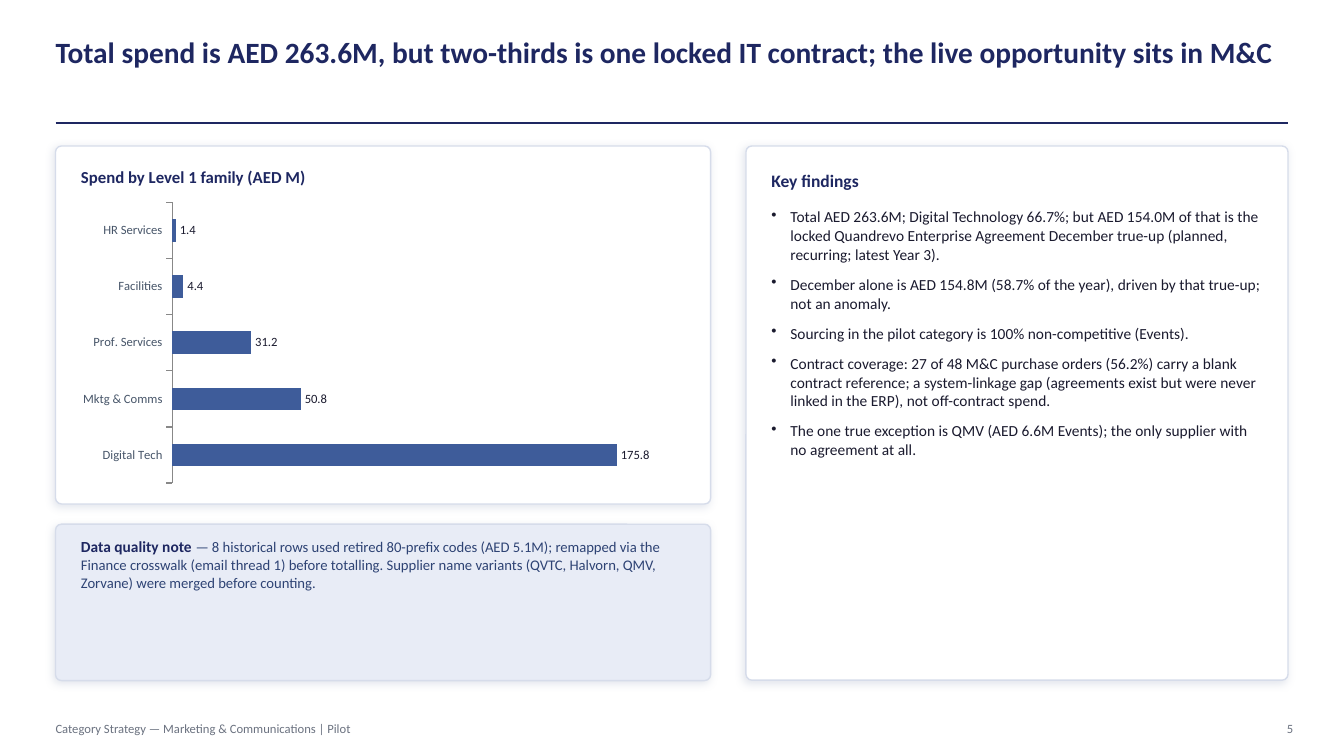
import pptx
import pptx.chart.data
import pptx.dml.color
import pptx.enum.chart
import pptx.enum.shapes
import pptx.enum.text
import pptx.oxml
import pptx.oxml.ns
import pptx.util
from pptx.util import Cm

COLORS = {
    "navy": "1E2761", "slate_blue": "2E4374", "bar": "3E5C9A", "ink": "1A1A2E",
    "axis_text": "475569", "axis_line": "888888", "footer": "6B7280",
    "border": "D6DCEA", "shadow": "9AA6C0", "note": "E8ECF6",
    "white": "FFFFFF", "black": "000000",
}
MIDDLE = pptx.enum.text.MSO_ANCHOR.MIDDLE
TOP = pptx.enum.text.MSO_ANCHOR.TOP
LEFT = pptx.enum.text.PP_ALIGN.LEFT
RIGHT = pptx.enum.text.PP_ALIGN.RIGHT


class SlideBuilder:
    """Holds the slide and its style, and adds each kind of element."""

    font_name = "Calibri"
    corner_radius = 0.15

    def __init__(self, slide):
        self.slide = slide

    def color(self, name):
        return pptx.dml.color.RGBColor.from_string(COLORS[name])

    def style_font(self, font, size, color, bold=False):
        font.name = self.font_name
        font.size = pptx.util.Pt(size)
        font.bold = bold
        font.color.rgb = self.color(color)

    def add_xml(self, parent, tag, attributes="", children=""):
        namespace = pptx.oxml.ns.nsdecls("a")
        parent.append(pptx.oxml.parse_xml(
            f"<a:{tag} {namespace} {attributes}>{children}</a:{tag}>"))

    def text_frame(self, left, top, width, height, anchor=TOP):
        box = self.slide.shapes.add_textbox(Cm(left), Cm(top), Cm(width), Cm(height))
        frame = box.text_frame
        frame.word_wrap = True
        frame.vertical_anchor = anchor
        frame.margin_left = frame.margin_right = 0
        frame.margin_top = frame.margin_bottom = 0
        return frame

    def text(self, text, area, size, color, bold=False, anchor=MIDDLE, align=LEFT):
        paragraph = self.text_frame(*area, anchor).paragraphs[0]
        paragraph.text = text
        paragraph.alignment = align
        self.style_font(paragraph.font, size, color, bold)

    def note(self, heading, body, area):
        paragraph = self.text_frame(*area).paragraphs[0]
        paragraph.line_spacing = 1.04
        for text, size, color, bold in (
            (heading, 11, "navy", True),
            (body, 10.5, "slate_blue", False),
        ):
            run = paragraph.add_run()
            run.text = text
            self.style_font(run.font, size, color, bold)

    def bullets(self, items, area):
        frame = self.text_frame(*area)
        for index, item in enumerate(items):
            paragraph = frame.add_paragraph() if index else frame.paragraphs[0]
            paragraph.text = item
            paragraph.line_spacing = 1.02
            paragraph.space_after = pptx.util.Pt(8)
            properties = paragraph._p.get_or_add_pPr()
            properties.set("marL", str(Cm(0.48)))
            properties.set("indent", str(-Cm(0.48)))
            self.add_xml(properties, "buChar", 'char="•"')
            self.style_font(paragraph.font, 11, "ink")

    def rule(self, left, top, width):
        line = self.slide.shapes.add_connector(
            pptx.enum.shapes.MSO_CONNECTOR.STRAIGHT,
            Cm(left), Cm(top), Cm(left + width), Cm(top))
        line.line.color.rgb = self.color("navy")
        line.line.width = pptx.util.Pt(1.25)
        self.add_xml(line._element.spPr, "effectLst")

    def card(self, left, top, width, height, fill="white"):
        shape = self.slide.shapes.add_shape(
            pptx.enum.shapes.MSO_SHAPE.ROUNDED_RECTANGLE,
            Cm(left), Cm(top), Cm(width), Cm(height))
        shape.adjustments[0] = self.corner_radius / min(width, height)
        shape.fill.solid()
        shape.fill.fore_color.rgb = self.color(fill)
        shape.line.color.rgb = self.color("border")
        shape.line.width = pptx.util.Pt(1)
        shape.shadow.inherit = False
        effects = shape._element.spPr.find(pptx.oxml.ns.qn("a:effectLst"))
        self.add_xml(
            effects, "outerShdw",
            f'blurRad="{pptx.util.Pt(6)}" dist="{pptx.util.Pt(2)}" '
            f'dir="{135 * 60000}" algn="bl" rotWithShape="0"',
            f'<a:srgbClr val="{COLORS["shadow"]}"><a:alpha val="28000"/></a:srgbClr>')

    def bar_chart(self, values, area):
        data = pptx.chart.data.CategoryChartData(number_format="0.0")
        data.categories = list(values)
        data.add_series("Series 1", list(values.values()))
        chart = self.slide.shapes.add_chart(
            pptx.enum.chart.XL_CHART_TYPE.BAR_CLUSTERED,
            *(Cm(length) for length in area), data).chart
        chart.has_legend = False
        chart.has_title = False
        self.style_font(chart.font, 10, "black")

        value_axis = chart.value_axis
        value_axis.minimum_scale = 0
        value_axis.maximum_scale = 200
        value_axis.has_major_gridlines = False
        value_axis.visible = False

        category_axis = chart.category_axis
        category_axis.major_tick_mark = pptx.enum.chart.XL_TICK_MARK.OUTSIDE
        category_axis.format.line.color.rgb = self.color("axis_line")
        category_axis.format.line.width = pptx.util.Pt(1)
        self.style_font(category_axis.tick_labels.font, 9, "axis_text")

        plot = chart.plots[0]
        plot.gap_width = 150
        plot.vary_by_categories = False
        fill = plot.series[0].format.fill
        fill.solid()
        fill.fore_color.rgb = self.color("bar")
        plot.has_data_labels = True
        labels = plot.data_labels
        labels.show_value = True
        labels.number_format = "0.0"
        labels.number_format_is_linked = False
        labels.position = pptx.enum.chart.XL_LABEL_POSITION.OUTSIDE_END
        self.style_font(labels.font, 9, "ink")


def main():
    presentation = pptx.Presentation()
    presentation.slide_width = Cm(33.87)
    presentation.slide_height = Cm(19.05)
    builder = SlideBuilder(presentation.slides.add_slide(presentation.slide_layouts[6]))

    margin, content_width, padding = 1.4, 31.06, 0.64
    card_top, left_width = 3.68, 16.51
    right_left, right_width = 18.8, 13.66
    note_top = 13.21
    left_text, left_text_width = margin + padding, 15.24
    right_text, right_text_width = right_left + padding, right_width - 2 * padding

    builder.text(
        "Total spend is AED 263.6M, but two-thirds is one locked IT contract; "
        "the live opportunity sits in M&C",
        (margin, 0.86, content_width, 2.08), 21, "navy", bold=True, anchor=TOP)
    builder.rule(margin, 3.1, content_width)

    builder.card(margin, card_top, left_width, 9.02)
    builder.text("Spend by Level 1 family (AED M)",
                 (left_text, 4.08, left_text_width, 0.76), 12, "navy", bold=True)
    builder.bar_chart(
        {"Digital Tech": 175.8, "Mktg & Comms": 50.8, "Prof. Services": 31.2,
         "Facilities": 4.4, "HR Services": 1.4},
        (1.78, 4.95, 15.62, 7.37))

    builder.card(margin, note_top, left_width, 3.94, fill="note")
    builder.note(
        "Data quality note ",
        "— 8 historical rows used retired 80-prefix codes (AED 5.1M); remapped via the "
        "Finance crosswalk (email thread 1) before totalling. Supplier name variants "
        "(QVTC, Halvorn, QMV, Zorvane) were merged before counting.",
        (left_text, 13.51, left_text_width, 3.3))

    builder.card(right_left, card_top, right_width, 13.46)
    builder.text("Key findings", (right_text, 4.14, right_text_width, 0.81),
                 12.5, "navy", bold=True)
    builder.bullets([
        "Total AED 263.6M; Digital Technology 66.7%; but AED 154.0M of that is the locked "
        "Quandrevo Enterprise Agreement December true-up (planned, recurring; latest Year 3).",
        "December alone is AED 154.8M (58.7% of the year), driven by that true-up; "
        "not an anomaly.",
        "Sourcing in the pilot category is 100% non-competitive (Events).",
        "Contract coverage: 27 of 48 M&C purchase orders (56.2%) carry a blank contract "
        "reference; a system-linkage gap (agreements exist but were never linked in the "
        "ERP), not off-contract spend.",
        "The one true exception is QMV (AED 6.6M Events); the only supplier with no "
        "agreement at all.",
    ], (right_text, 5.21, right_text_width, 11.43))

    builder.text("Category Strategy — Marketing & Communications | Pilot",
                 (margin, 17.98, 22.86, 0.76), 9, "footer")
    builder.text("5", (31.32, 17.98, 1.27, 0.76), 9, "footer", align=RIGHT)
    presentation.save("out.pptx")


if __name__ == "__main__":
    main()
